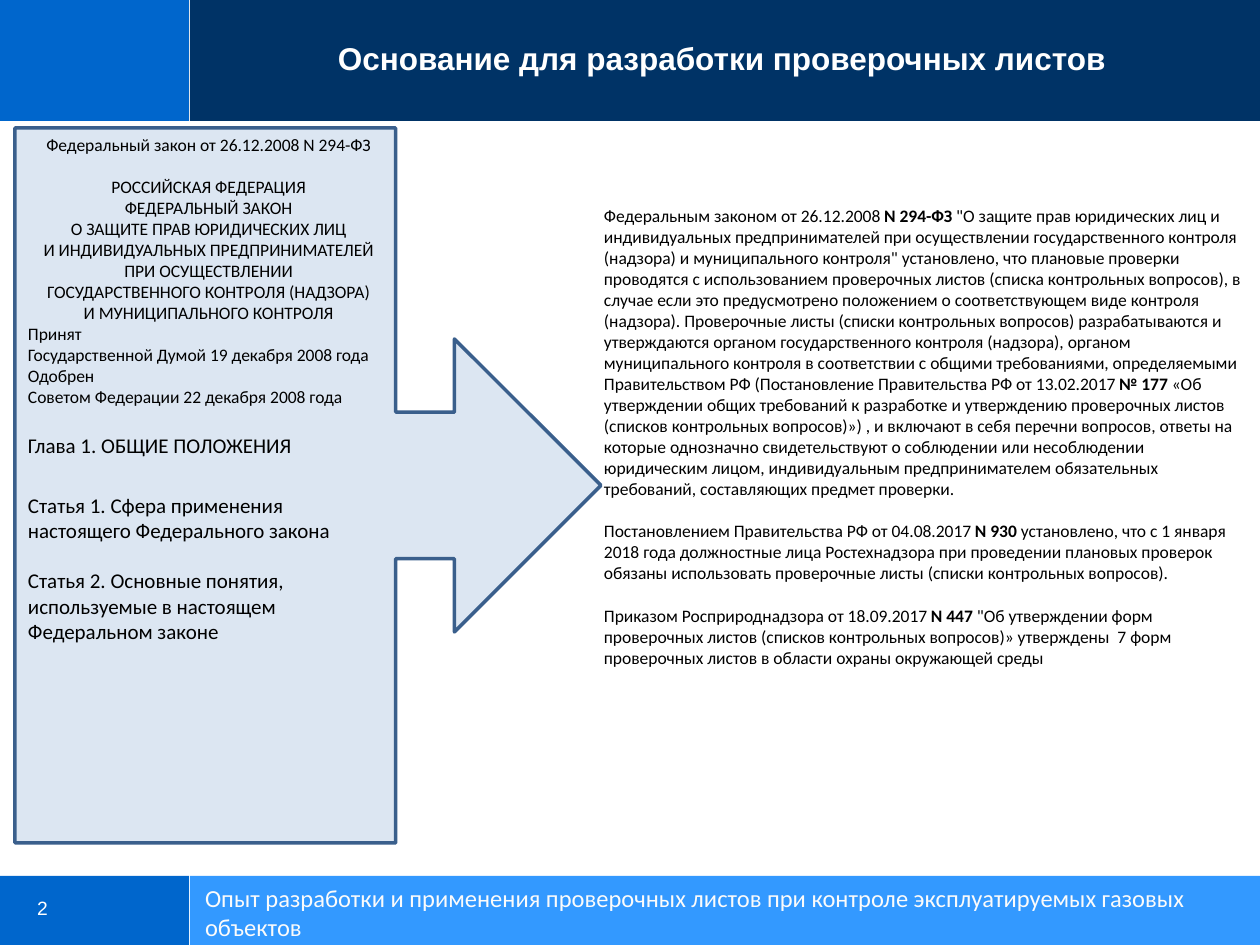
from dataclasses import dataclass

from pptx import Presentation
from pptx.dml.color import RGBColor
from pptx.enum.shapes import MSO_SHAPE
from pptx.enum.text import MSO_ANCHOR, PP_ALIGN
from pptx.util import Emu, Pt

RECT = MSO_SHAPE.RECTANGLE
CALLOUT = MSO_SHAPE.RIGHT_ARROW_CALLOUT
TOP, MIDDLE = MSO_ANCHOR.TOP, MSO_ANCHOR.MIDDLE
LEFT, CENTER = PP_ALIGN.LEFT, PP_ALIGN.CENTER

PX = 914400 / 126
W, H = 1260, 945
COLORS = {
    "blue": "0066CC", "navy": "003366", "sky": "3399FF", "pale": "DCE6F2",
    "outline": "3A5F8C", "white": "FFFFFF", "footer": "FBFBFB", "black": "000000",
}


@dataclass
class Box:
    x: int
    y: int
    w: int
    h: int

    def emu(self) -> list[Emu]:
        return [Emu(round(v * PX)) for v in (self.x, self.y, self.w, self.h)]


@dataclass
class Para:
    runs: list[str]  # every second run is bold
    size: int = 10
    align: PP_ALIGN = LEFT
    before: float = 0
    font: str = "Calibri"
    color: str = "black"
    bold: bool = False


def rgb(name: str) -> RGBColor:
    return RGBColor.from_string(COLORS[name])


def add_block(s, box: Box, fill: str, kind=RECT, line: str = ""):
    sp = s.shapes.add_shape(kind, *box.emu())
    sp.shadow.inherit = False
    sp.fill.solid()
    sp.fill.fore_color.rgb = rgb(fill)
    if line:
        sp.line.color.rgb = rgb(line)
        sp.line.width = Pt(2)
    else:
        sp.line.fill.background()
    return sp


def write(sp, paras: list[Para], anchor=TOP, inset: tuple[int, int] = (13, 6)) -> None:
    tf = sp.text_frame
    tf.word_wrap = True
    tf.vertical_anchor = anchor
    tf.margin_left = tf.margin_right = Emu(round(inset[0] * PX))
    tf.margin_top = tf.margin_bottom = Emu(round(inset[1] * PX))
    for i, para in enumerate(paras):
        p = tf.add_paragraph() if i else tf.paragraphs[0]
        p.alignment = para.align
        p.space_before = Pt(para.before)
        for j, text in enumerate(para.runs):
            r = p.add_run()
            r.text = text
            r.font.name = para.font
            r.font.size = Pt(para.size)
            r.font.bold = para.bold or j % 2 == 1
            r.font.color.rgb = rgb(para.color)


def add_text(s, box: Box, paras: list[Para], inset: tuple[int, int] = (13, 6)) -> None:
    write(s.shapes.add_textbox(*box.emu()), paras, inset=inset)


LAW = [
    Para(["Федеральный закон от 26.12.2008 N 294-ФЗ"], align=CENTER),
    Para(["РОССИЙСКАЯ ФЕДЕРАЦИЯ"], align=CENTER, before=12),
    *[Para([text], align=CENTER) for text in (
        "ФЕДЕРАЛЬНЫЙ ЗАКОН",
        "О ЗАЩИТЕ ПРАВ ЮРИДИЧЕСКИХ ЛИЦ",
        "И ИНДИВИДУАЛЬНЫХ ПРЕДПРИНИМАТЕЛЕЙ ПРИ ОСУЩЕСТВЛЕНИИ",
        "ГОСУДАРСТВЕННОГО КОНТРОЛЯ (НАДЗОРА)",
        "И МУНИЦИПАЛЬНОГО КОНТРОЛЯ",
    )],
    *[Para([text]) for text in (
        "Принят",
        "Государственной Думой 19 декабря 2008 года",
        "Одобрен",
        "Советом Федерации 22 декабря 2008 года",
    )],
    Para(["Глава 1. ОБЩИЕ ПОЛОЖЕНИЯ"], 12, before=14.5),
    Para(["Статья 1. Сфера применения настоящего Федерального закона"], 12, before=19.5),
    Para(["Статья 2. Основные понятия, используемые в настоящем Федеральном законе"],
         12, before=14.5),
]

GROUNDS = [
    Para([
        "Федеральным законом от 26.12.2008 ",
        "N 294-ФЗ ",
        "\"О защите прав юридических лиц и индивидуальных предпринимателей при "
        "осуществлении государственного контроля (надзора) и муниципального контроля\" "
        "установлено, что плановые проверки проводятся с использованием проверочных "
        "листов (списка контрольных вопросов), в случае если это предусмотрено положением "
        "о соответствующем виде контроля (надзора). Проверочные листы (списки контрольных "
        "вопросов) разрабатываются и утверждаются органом государственного контроля "
        "(надзора), органом муниципального контроля в соответствии с общими требованиями, "
        "определяемыми Правительством РФ (Постановление Правительства РФ от 13.02.2017 ",
        "№ 177 ",
        "«Об утверждении общих требований к разработке и утверждению проверочных листов "
        "(списков контрольных вопросов)») , и включают в себя перечни вопросов, ответы на "
        "которые однозначно свидетельствуют о соблюдении или несоблюдении юридическим "
        "лицом, индивидуальным предпринимателем обязательных требований, составляющих "
        "предмет проверки.",
    ]),
    Para([
        "Постановлением Правительства РФ от 04.08.2017 ",
        "N 930 ",
        "установлено, что с 1 января 2018 года должностные лица Ростехнадзора при "
        "проведении плановых проверок обязаны использовать проверочные листы (списки "
        "контрольных вопросов).",
    ], before=12),
    Para([
        "Приказом Росприроднадзора от 18.09.2017 ",
        "N 447 ",
        "\"Об утверждении форм проверочных листов (списков контрольных вопросов)» "
        "утверждены  7 форм проверочных листов в области охраны окружающей среды",
    ], before=12),
]


def main() -> None:
    prs = Presentation()
    prs.slide_width, prs.slide_height = Box(0, 0, W, H).emu()[2:]
    s = prs.slides.add_slide(prs.slide_layouts[5])

    # Header and footer bands
    split, head_h, foot_y = 189, 121, 876
    for y, h, right in ((0, head_h, "navy"), (foot_y, H - foot_y, "sky")):
        add_block(s, Box(0, y, split, h), "blue")
        add_block(s, Box(split + 1, y, W - split - 1, h), right)

    # Title, raised above the header band
    title = s.shapes.title
    title.left, title.top, title.width, title.height = Box(184, 0, 1076, 115).emu()
    write(title, [Para(["Основание для разработки проверочных листов"], 18, CENTER,
                       font="Arial", color="white", bold=True)], MIDDLE, (14, 8))
    s.shapes._spTree.append(title._element)

    # Law callout and the grounds it points to
    add_block(s, Box(15, 128, 586, 715), "pale", CALLOUT, "outline")
    add_text(s, Box(15, 128, 387, 525), LAW)
    add_text(s, Box(591, 199, 669, 479), GROUNDS)

    # Slide number and footer caption
    add_text(s, Box(37, 896, 67, 24),
             [Para(["2"], 11, font="Arial", color="white")], inset=(0, 0))
    footer = add_block(s, Box(194, 878, W - 194, H - 878), "sky")
    write(footer, [Para(["Опыт разработки и применения проверочных листов при контроле "
                         "эксплуатируемых газовых объектов"], 14, color="footer")],
          inset=(11, 5))

    prs.save("out.pptx")


if __name__ == "__main__":
    main()
